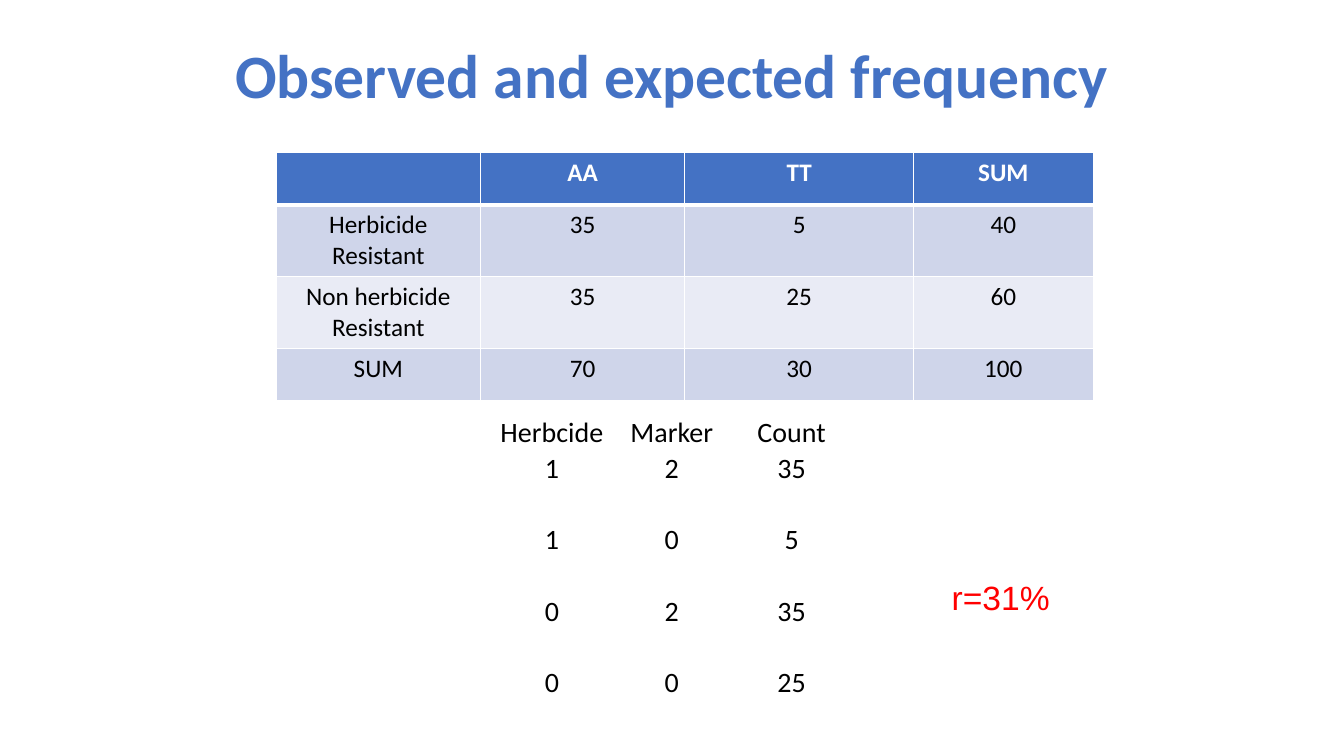
from lxml import etree
from pptx import Presentation
from pptx.dml.color import RGBColor
from pptx.enum.shapes import MSO_SHAPE
from pptx.enum.text import MSO_ANCHOR, MSO_AUTO_SIZE, PP_ALIGN
from pptx.oxml.ns import qn
from pptx.util import Cm, Pt

CENTER = PP_ALIGN.CENTER
MIDDLE, BOTTOM = MSO_ANCHOR.MIDDLE, MSO_ANCHOR.BOTTOM
GROW = MSO_AUTO_SIZE.SHAPE_TO_FIT_TEXT
RECTANGLE = MSO_SHAPE.RECTANGLE
PLAIN_TABLE_STYLE = "{2D5ABB26-0587-4C30-8999-92F81FD0307C}"

COLORS = {
    "blue": "4472C4",
    "band": "CFD5EA",
    "light band": "E9EBF5",
    "white": "FFFFFF",
    "black": "000000",
    "red": "FF0000",
}

TITLE = "Observed and expected frequency"
FREQUENCIES = [
    ("", "AA", "TT", "SUM"),
    ("Herbicide Resistant", "35", "5", "40"),
    ("Non herbicide\nResistant", "35", "25", "60"),
    ("SUM", "70", "30", "100"),
]
FREQUENCY_WIDTHS = (5.15, 5.15, 5.76, 4.53)
FREQUENCY_HEIGHTS = (1.32, 1.81, 1.81, 1.32)

COUNT_HEADER = ("Herbcide", "Marker", "Count")
COUNTS = [("1", "2", "35"), ("1", "0", "5"), ("0", "2", "35"), ("0", "0", "25")]
COUNT_WIDTH, COUNT_HEIGHT = 3.02, 0.9
CORRELATION = "r=31%"


def color(name):
    return RGBColor.from_string(COLORS[name])


def write(text_frame, text, size, color_name, bold=False, font="Calibri"):
    text_frame.text = text
    for paragraph in text_frame.paragraphs:
        paragraph.alignment = CENTER
        for run in paragraph.runs:
            run.font.name = font
            run.font.size = Pt(size)
            run.font.bold = bold
            run.font.color.rgb = color(color_name)
        if not paragraph.runs:
            # An empty cell keeps its row low only with its own text size
            etree.SubElement(paragraph._p, qn("a:endParaRPr"), sz=str(size * 100))


def add_plain_table(slide, left, top, widths, heights):
    frame = slide.shapes.add_table(
        len(heights), len(widths), Cm(left), Cm(top), Cm(sum(widths)), Cm(sum(heights)))
    table = frame.table
    table.first_row = table.horz_banding = False
    frame._element.find(".//" + qn("a:tableStyleId")).text = PLAIN_TABLE_STYLE
    for column, width in zip(table.columns, widths):
        column.width = Cm(width)
    for row, height in zip(table.rows, heights):
        row.height = Cm(height)
    return table


def add_borders(cell, top, bottom):
    """Draw white borders; top and bottom are widths in points."""
    properties = cell._tc.get_or_add_tcPr()
    for side, width in (("L", 1), ("R", 1), ("T", top), ("B", bottom)):
        line = etree.SubElement(properties, qn("a:ln" + side), w=str(Pt(width)))
        fill = etree.SubElement(line, qn("a:solidFill"))
        etree.SubElement(fill, qn("a:srgbClr"), val=COLORS["white"])


def add_frequency_table(slide):
    table = add_plain_table(slide, 6.96, 3.84, FREQUENCY_WIDTHS, FREQUENCY_HEIGHTS)
    fills = ("blue", "band", "light band", "band")
    for i, values in enumerate(FREQUENCIES):
        header = i == 0
        for j, value in enumerate(values):
            cell = table.cell(i, j)
            add_borders(cell, top=3 if i == 1 else 1, bottom=3 if header else 1)
            cell.fill.solid()
            cell.fill.fore_color.rgb = color(fills[i])
            write(cell.text_frame, value, 18, "white" if header else "black", header)


def add_title(slide):
    title = slide.shapes.add_textbox(Cm(2.33), Cm(0.15), Cm(29.21), Cm(3.68))
    title.text_frame.word_wrap = True
    title.text_frame.vertical_anchor = MIDDLE
    write(title.text_frame, TITLE, 44, "blue", bold=True)
    title.text_frame.paragraphs[0].line_spacing = 0.9


def add_count_table(slide):
    rows = [COUNT_HEADER]
    for count in COUNTS:
        rows += [count, ("",) * len(COUNT_HEADER)]
    rows.pop()  # no gap row after the last count
    table = add_plain_table(
        slide, 12.4, 10.44, [COUNT_WIDTH] * len(COUNT_HEADER), [COUNT_HEIGHT] * len(rows))
    for i, values in enumerate(rows):
        for j, value in enumerate(values):
            cell = table.cell(i, j)
            cell.margin_left = cell.margin_right = cell.margin_top = Cm(0.02)
            cell.margin_bottom = 0
            cell.vertical_anchor = BOTTOM
            cell.fill.background()
            write(cell.text_frame, value, 20, "black")


def add_correlation(slide):
    box = slide.shapes.add_shape(RECTANGLE, Cm(20.8), Cm(14.4), Cm(8.84), Cm(1.28))
    box.shadow.inherit = False
    box.line.fill.background()
    box.fill.solid()
    box.fill.fore_color.rgb = color("white")
    fill_color = box._element.spPr.find(qn("a:solidFill"))[0]
    etree.SubElement(fill_color, qn("a:alpha"), val="95000")
    box.text_frame.word_wrap = True
    box.text_frame.auto_size = GROW
    write(box.text_frame, CORRELATION, 24, "red", font="Arial")


def main():
    presentation = Presentation()
    presentation.slide_width, presentation.slide_height = Cm(33.87), Cm(19.05)
    slide = presentation.slides.add_slide(presentation.slide_layouts[6])
    add_frequency_table(slide)
    add_title(slide)
    add_count_table(slide)
    add_correlation(slide)
    presentation.save("out.pptx")


if __name__ == "__main__":
    main()
